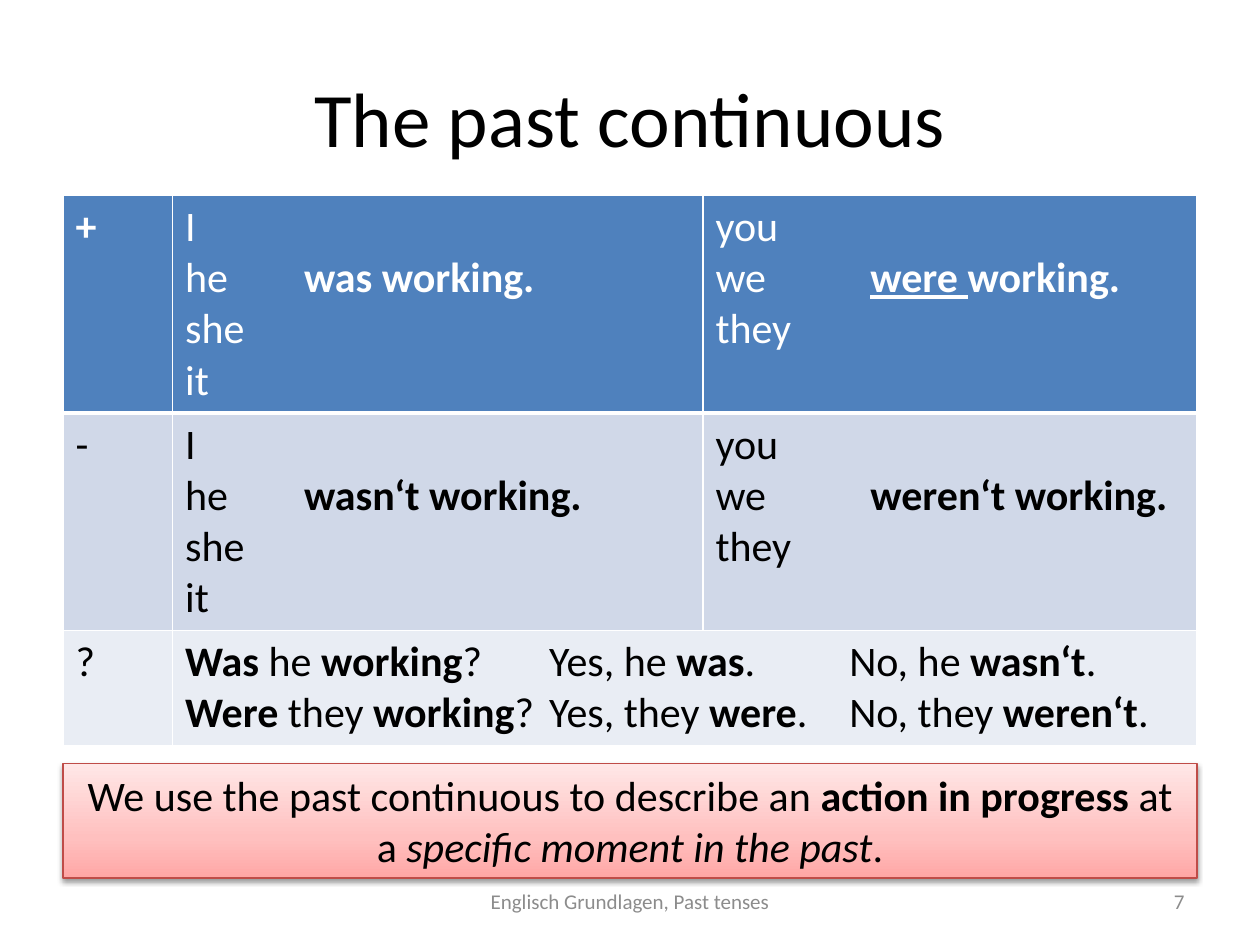
from lxml import etree
from pptx import Presentation
from pptx.dml.color import RGBColor
from pptx.enum.shapes import MSO_SHAPE
from pptx.enum.text import MSO_ANCHOR, PP_ALIGN
from pptx.oxml import parse_xml
from pptx.oxml.ns import qn
from pptx.util import Pt

LEFT, CENTER, RIGHT = PP_ALIGN.LEFT, PP_ALIGN.CENTER, PP_ALIGN.RIGHT
MIDDLE, TOP = MSO_ANCHOR.MIDDLE, MSO_ANCHOR.TOP
RECTANGLE = MSO_SHAPE.RECTANGLE
DRAWING_NS = 'xmlns:a="http://schemas.openxmlformats.org/drawingml/2006/main"'
FONT = "Calibri"

# A paragraph is a list of (text, style): b bold, i italic, u underlined.
TITLE = "The past continuous"


def forms(pronouns, *verb):
    """Pronouns one per line, with the verb beside the second."""
    lines = [[(pronoun, "")] for pronoun in pronouns]
    lines[1] += [("\t", ""), *verb]
    return lines


SINGULAR = ("I", "he", "she", "it")
PLURAL = ("you", "we", "they")
QUESTIONS = [
    [("Was ", "b"), ("he ", ""), ("working", "b"), ("?\tYes, he ", ""),
     ("was", "b"), (".\tNo, he ", ""), ("wasn‘t", "b"), (".", "")],
    [("Were ", "b"), ("they ", ""), ("working", "b"), ("?\tYes, they ", ""),
     ("were", "b"), (".\tNo, they ", ""), ("weren‘t", "b"), (".", "")],
]
# Each row: fill, text colour, height, cells as (paragraphs, tab stops)
ROWS = [
    ("4F81BD", "FFFFFF", 124, [
        ([[("+", "b")]], ()),
        (forms(SINGULAR, ("was working.", "b")), (68,)),
        (forms(PLURAL, ("were ", "bu"), ("working.", "b")), (88.5,))]),
    ("D0D8E8", "000000", 124, [
        ([[("-", "")]], ()),
        (forms(SINGULAR, ("wasn‘t working.", "b")), (68,)),
        (forms(PLURAL, ("weren‘t working.", "b")), (88.5,))]),
    ("E9EDF4", "000000", 66, [
        ([[("?", "")]], ()),
        (QUESTIONS, (208, 379.5))]),
]
COLUMN_WIDTHS = (62.6, 303.1, 282.3)
RULE = [[("We use the past continuous to describe an ", ""), ("action in progress ", "b"),
         ("at a ", ""), ("specific moment in the past", "i"), (".", "")]]
RULE_STOPS = [(0, "FFA6A5"), (35, "FFC0BF"), (100, "FFE7E7")]
# Text, left, width, alignment
FOOTERS = [("7", 516, 168, RIGHT),
           ("Englisch Grundlagen, Past tenses", 246, 228, CENTER)]
MARGIN, CONTENT_WIDTH = 36, 648


def rgb(code):
    return RGBColor.from_string(code)


def write(frame, paragraphs, size, color, align=LEFT, tabs=()):
    for index, runs in enumerate(paragraphs):
        paragraph = frame.paragraphs[0] if index == 0 else frame.add_paragraph()
        paragraph.alignment = align
        if tabs:
            properties = paragraph._p.get_or_add_pPr()
            tab_list = etree.SubElement(properties, qn("a:tabLst"))
            for stop in tabs:
                etree.SubElement(tab_list, qn("a:tab"), pos=str(int(Pt(stop))), algn="l")
        for text, style in runs:
            run = paragraph.add_run()
            run.text = text
            font = run.font
            font.name, font.size = FONT, Pt(size)
            font.color.rgb = rgb(color)
            font.bold, font.italic, font.underline = ("b" in style, "i" in style, "u" in style)


def set_borders(cell, top, bottom):
    properties = cell._tc.get_or_add_tcPr()
    sides = (("L", 1), ("R", 1), ("T", top), ("B", bottom))
    for index, (side, width) in enumerate(sides):
        properties.insert(index, parse_xml(
            f'<a:ln{side} {DRAWING_NS} w="{Pt(width)}"><a:solidFill>'
            f'<a:srgbClr val="FFFFFF"/></a:solidFill></a:ln{side}>'))


def add_forms_table(slide):
    height = sum(row[2] for row in ROWS)
    table = slide.shapes.add_table(len(ROWS), len(COLUMN_WIDTHS), Pt(MARGIN), Pt(111.6),
                                   Pt(CONTENT_WIDTH), Pt(height)).table
    for column, width in zip(table.columns, COLUMN_WIDTHS):
        column.width = Pt(width)
    table.cell(2, 1).merge(table.cell(2, 2))
    for r, (fill, color, row_height, contents) in enumerate(ROWS):
        table.rows[r].height = Pt(row_height)
        for cell in table.rows[r].cells:
            cell.fill.solid()
            cell.fill.fore_color.rgb = rgb(fill)
            set_borders(cell, top=3 if r == 1 else 1, bottom=3 if r == 0 else 1)
        for c, (paragraphs, tabs) in enumerate(contents):
            write(table.cell(r, c).text_frame, paragraphs, 24, color, tabs=tabs)


def add_rule_box(slide):
    box = slide.shapes.add_shape(RECTANGLE, Pt(MARGIN), Pt(436.3), Pt(CONTENT_WIDTH), Pt(65.5))
    box.line.color.rgb = rgb("BF4C48")
    box.line.width = Pt(0.75)
    stops = "".join(f'<a:gs pos="{position * 1000}"><a:srgbClr val="{color}"/></a:gs>'
                    for position, color in RULE_STOPS)
    properties = box._element.spPr
    properties.find(qn("a:prstGeom")).addnext(parse_xml(
        f'<a:gradFill {DRAWING_NS} rotWithShape="1"><a:gsLst>{stops}</a:gsLst>'
        '<a:lin ang="16200000" scaled="0"/></a:gradFill>'))
    properties.append(parse_xml(
        f'<a:effectLst {DRAWING_NS}><a:outerShdw blurRad="{Pt(3.1)}" dist="{Pt(1.6)}" '
        'dir="5400000" rotWithShape="0"><a:srgbClr val="000000"><a:alpha val="38000"/>'
        '</a:srgbClr></a:outerShdw></a:effectLst>'))
    box.text_frame.vertical_anchor = TOP
    write(box.text_frame, RULE, 24, "000000", CENTER)


def main():
    presentation = Presentation()
    presentation.slide_width, presentation.slide_height = Pt(720), Pt(540)
    slide = presentation.slides.add_slide(presentation.slide_layouts[5])

    title = slide.shapes.title
    title.left, title.top, title.width, title.height = (
        Pt(MARGIN), Pt(21.6), Pt(CONTENT_WIDTH), Pt(90))
    title.text_frame.vertical_anchor = MIDDLE
    write(title.text_frame, [[(TITLE, "")]], 44, "000000", CENTER)

    add_forms_table(slide)
    add_rule_box(slide)

    for text, left, width, align in FOOTERS:
        frame = slide.shapes.add_textbox(Pt(left), Pt(500.5), Pt(width), Pt(28.8)).text_frame
        frame.word_wrap = True
        frame.vertical_anchor = MIDDLE
        write(frame, [[(text, "")]], 12, "8C8C8C", align)

    presentation.save("out.pptx")


if __name__ == "__main__":
    main()
